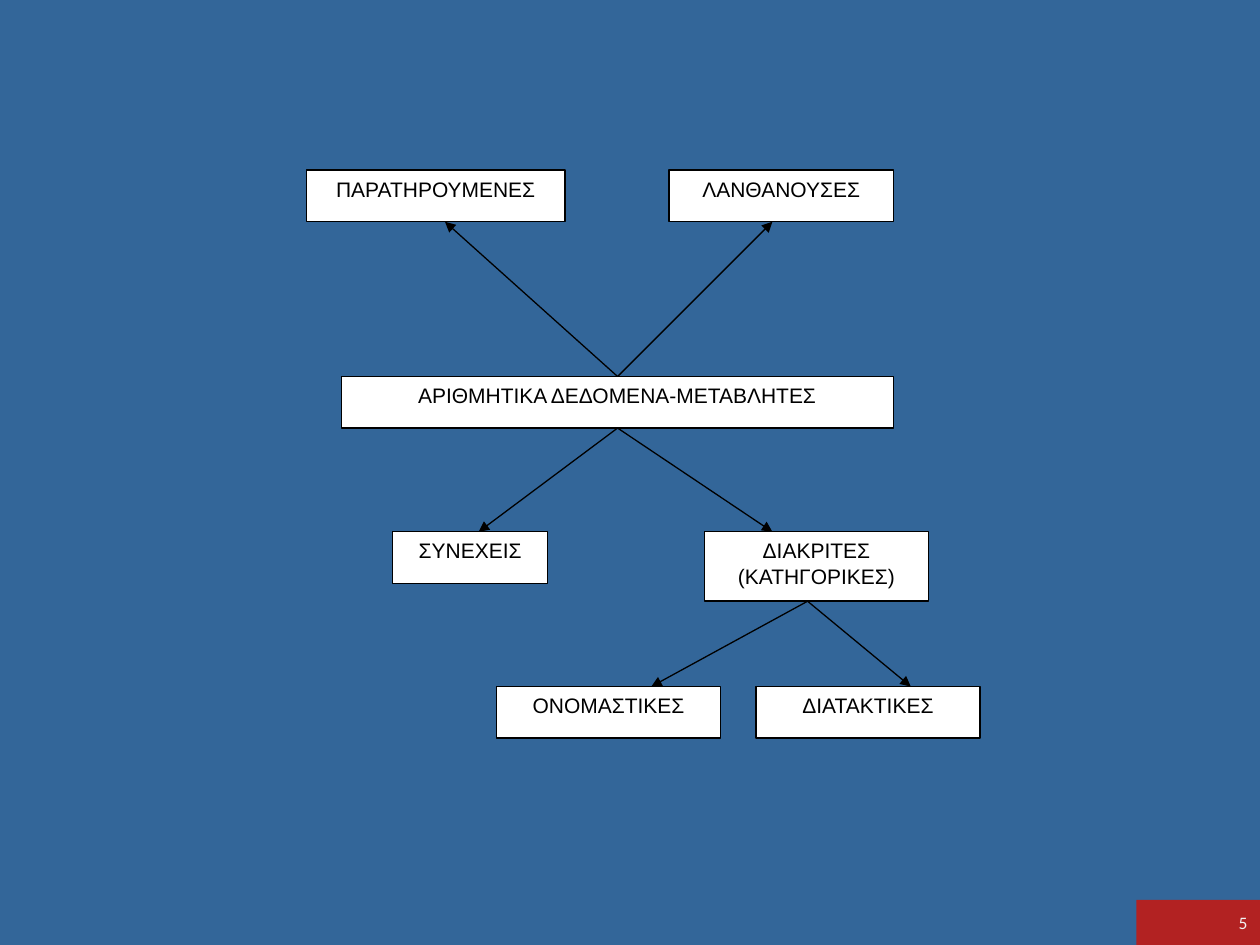
"""Build a slide with a tree of the kinds of numerical variables."""
from lxml import etree
from pptx import Presentation
from pptx import util as u
from pptx.dml.color import RGBColor
from pptx.enum import shapes, text
from pptx.oxml import ns

BLUE = RGBColor(0x33, 0x66, 0x99)
RED = RGBColor(0xB2, 0x22, 0x22)
WHITE = RGBColor(0xFF, 0xFF, 0xFF)
PALE = RGBColor(0xF2, 0xF2, 0xF2)
BLACK = RGBColor(0, 0, 0)

LINE_WIDTH = u.Pt(0.75)
BOX_HEIGHT = 1.04
TALL_HEIGHT = 1.4
KIND_WIDTH = 4.52
OBSERVED_ROW, ROOT_ROW, TYPE_ROW, SCALE_ROW = 3.43, 7.59, 10.72, 13.84

BOXES = [
    ("ΑΡΙΘΜΗΤΙΚΑ ΔΕΔΟΜΕΝΑ-ΜΕΤΑΒΛΗΤΕΣ", 6.88, ROOT_ROW, 11.13, BOX_HEIGHT),
    ("ΠΑΡΑΤΗΡΟΥΜΕΝΕΣ", 6.18, OBSERVED_ROW, 5.21, BOX_HEIGHT),
    ("ΛΑΝΘΑΝΟΥΣΕΣ", 13.49, OBSERVED_ROW, KIND_WIDTH, BOX_HEIGHT),
    ("ΣΥΝΕΧΕΙΣ", 7.92, TYPE_ROW, 3.12, BOX_HEIGHT),
    ("ΔΙΑΚΡΙΤΕΣ (ΚΑΤΗΓΟΡΙΚΕΣ)", 14.2, TYPE_ROW, KIND_WIDTH, TALL_HEIGHT),
    ("ΟΝΟΜΑΣΤΙΚΕΣ", 10.01, SCALE_ROW, KIND_WIDTH, BOX_HEIGHT),
    ("ΔΙΑΤΑΚΤΙΚΕΣ", 15.24, SCALE_ROW, KIND_WIDTH, BOX_HEIGHT),
]

BRANCHES = [
    ((16.28, TYPE_ROW + TALL_HEIGHT), (13.13, 18.36), SCALE_ROW),
    ((12.45, ROOT_ROW + BOX_HEIGHT), (9.65, 15.57), TYPE_ROW),
    ((12.45, ROOT_ROW), (8.97, 15.57), OBSERVED_ROW + BOX_HEIGHT),
]


def add_box(parent, words, left, top, width, height, fill):
    """Add a filled rectangle and return it with its styled text span."""
    box = parent.shapes.add_shape(
        shapes.MSO_SHAPE.RECTANGLE,
        u.Cm(left), u.Cm(top), u.Cm(width), u.Cm(height))
    box.shadow.inherit = False
    box.fill.solid()
    box.fill.fore_color.rgb = fill
    box.text_frame.word_wrap = True
    span = box.text_frame.paragraphs[0].add_run()
    span.text = words
    return box, span


def style_text(box, span, font, size, color, align, anchor):
    """Set the font and the alignment of the text in a box."""
    box.text_frame.vertical_anchor = anchor
    box.text_frame.paragraphs[0].alignment = align
    span.font.name = font
    span.font.size = u.Pt(size)
    span.font.color.rgb = color


def add_variable(parent, words, left, top, width, height):
    """Add an outlined white box that names a kind of variable."""
    box, span = add_box(parent, words, left, top, width, height, WHITE)
    box.line.color.rgb = BLACK
    box.line.width = LINE_WIDTH
    style_text(box, span, "Arial", 12, BLACK,
               text.PP_ALIGN.CENTER, text.MSO_ANCHOR.TOP)


def add_arrow(parent, start, end):
    """Add a straight arrow from start to end."""
    arrow = parent.shapes.add_connector(
        shapes.MSO_CONNECTOR.STRAIGHT, *(u.Cm(value) for value in start + end))
    arrow.line.color.rgb = BLACK
    arrow.line.width = LINE_WIDTH
    outline = arrow.line._get_or_add_ln()
    etree.SubElement(outline, ns.qn("a:tailEnd"), type="triangle")
    etree.SubElement(arrow._element.spPr, ns.qn("a:effectLst"))


def add_page_number(page, number):
    """Add the red corner tab with the page number."""
    box, span = add_box(page, number, 22.91, 18.14, 2.49, 0.91, RED)
    box.line.fill.background()
    style_text(box, span, "Calibri", 10, PALE,
               text.PP_ALIGN.RIGHT, text.MSO_ANCHOR.MIDDLE)


def main():
    """Build and save the deck."""
    deck = Presentation()
    deck.slide_width, deck.slide_height = u.Cm(25.4), u.Cm(19.05)
    page = deck.slides.add_slide(deck.slide_layouts[6])
    page.background.fill.solid()
    page.background.fill.fore_color.rgb = BLUE
    add_page_number(page, "5")
    tree = page.shapes.add_group_shape()
    for box in BOXES:
        add_variable(tree, *box)
    for start, targets, level in BRANCHES:
        for target in targets:
            add_arrow(tree, start, (target, level))
    deck.save("out.pptx")


if __name__ == "__main__":
    main()
